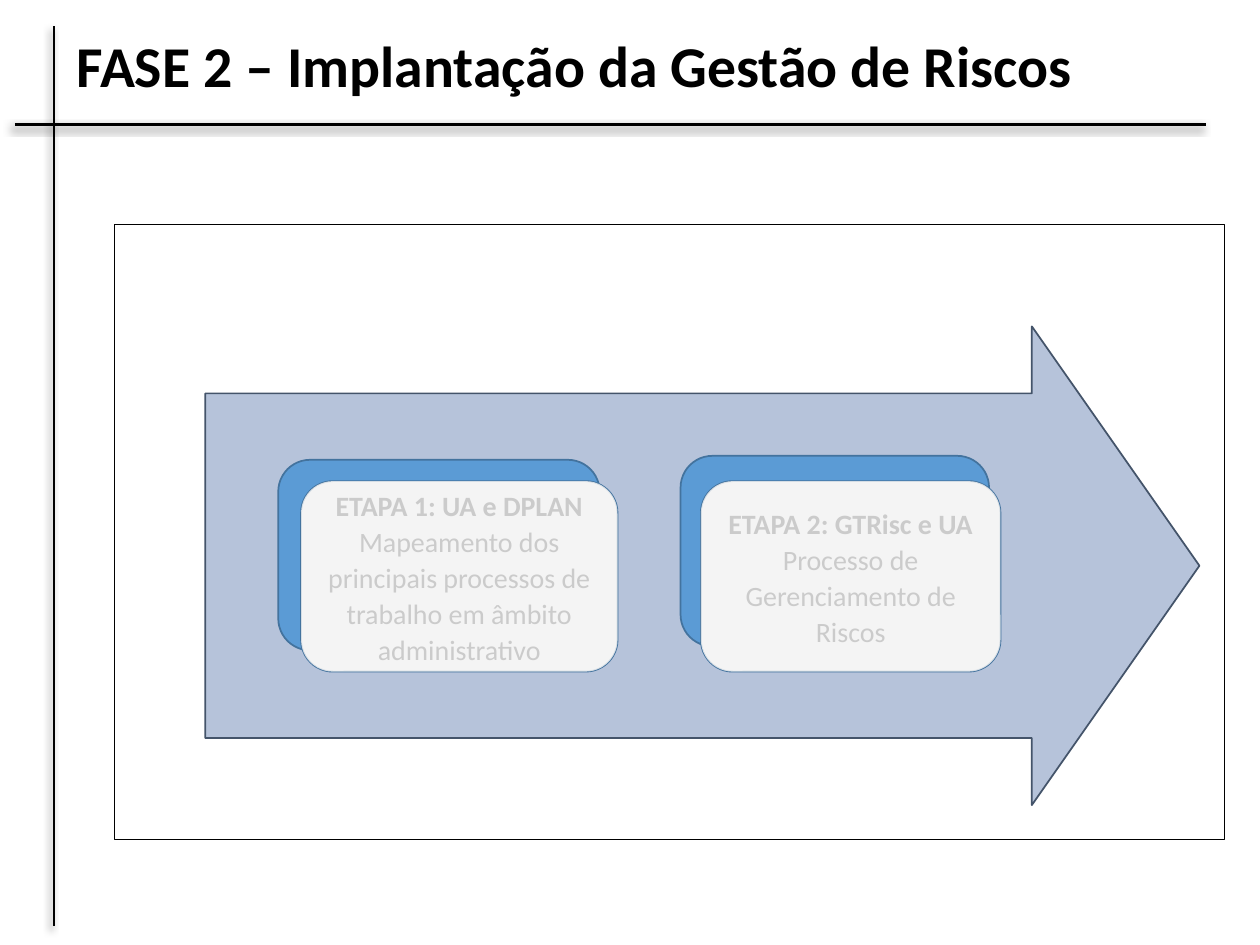
from lxml import etree
from pptx import Presentation
from pptx.dml.color import RGBColor
from pptx.enum.shapes import MSO_CONNECTOR, MSO_SHAPE
from pptx.enum.text import MSO_ANCHOR, PP_ALIGN
from pptx.oxml.ns import qn
from pptx.util import Cm, Pt

STRAIGHT = MSO_CONNECTOR.STRAIGHT
RECTANGLE = MSO_SHAPE.RECTANGLE
ROUNDED = MSO_SHAPE.ROUNDED_RECTANGLE
RIGHT_ARROW = MSO_SHAPE.RIGHT_ARROW
MIDDLE = MSO_ANCHOR.MIDDLE
CENTER = PP_ALIGN.CENTER

FONT = "Calibri"
COLORS = {
    "black": "000000",
    "white": "FFFFFF",
    "arrow": "2F5597",
    "arrow_edge": "44546A",
    "back_card": "5B9BD5",
    "card_edge": "43739E",
    "veil": "F2F2F2",
}
CARD_TOP, CARD_HEIGHT = 9.7, 3.84

# Back card (left, top, width), front card (left, width), heading, description
STAGES = [
    ((5.61, 9.27, 6.48), (6.07, 6.38), "ETAPA 1: UA e DPLAN",
     "Mapeamento dos principais processos de trabalho em âmbito administrativo"),
    ((13.72, 9.19, 6.22), (14.13, 6.04), "ETAPA 2: GTRisc e UA",
     "Processo de Gerenciamento de Riscos"),
]


def color(name):
    return RGBColor.from_string(COLORS[name])


def set_alpha(parent, percent):
    for value in parent.iter(qn("a:srgbClr")):
        etree.SubElement(value, qn("a:alpha"), val=str(percent * 1000))


def add_rule(page, start, end):
    """Draw a black line with a soft shadow to its lower left."""
    rule = page.shapes.add_connector(STRAIGHT, *map(Cm, start + end))
    rule.line.color.rgb = color("black")
    rule.line.width = Pt(1.5)
    effects = etree.SubElement(rule._element.spPr, qn("a:effectLst"))
    shadow = etree.SubElement(
        effects, qn("a:outerShdw"), blurRad=str(Pt(4)), dist=str(Pt(3)),
        dir=str(135 * 60000), algn="tr", rotWithShape="0")
    etree.SubElement(shadow, qn("a:srgbClr"), val=COLORS["black"])
    set_alpha(shadow, 40)


def add_title(page, text):
    box = page.shapes.add_textbox(Cm(1.3), Cm(0.18), Cm(24.87), Cm(2.41))
    frame = box.text_frame
    frame.word_wrap = True
    frame.vertical_anchor = MIDDLE
    para = frame.paragraphs[0]
    para.text = text
    para.line_spacing = 0.9
    style_text(para, 33, True)


def style_text(para, size, bold):
    para.font.name = FONT
    para.font.size = Pt(size)
    para.font.bold = bold
    para.font.color.rgb = color("black")


def add_block(shapes, kind, bounds, fill=None, edge=None, width=1, alpha=None):
    block = shapes.add_shape(kind, *map(Cm, bounds))
    block.shadow.inherit = False
    if fill:
        block.fill.solid()
        block.fill.fore_color.rgb = color(fill)
    else:
        block.fill.background()
    if alpha:
        set_alpha(block._element.spPr.find(qn("a:solidFill")), alpha)
    if edge:
        block.line.color.rgb = color(edge)
        block.line.width = Pt(width)
    else:
        block.line.fill.background()
    return block


def write_stage(card, heading, description):
    frame = card.text_frame
    frame.word_wrap = True
    frame.vertical_anchor = MIDDLE
    frame.margin_left = frame.margin_right = 0
    frame.margin_top = frame.margin_bottom = 0
    frame.text = f"{heading}\n{description}"
    for para, bold in zip(frame.paragraphs, (True, False)):
        para.alignment = CENTER
        para.line_spacing = 1.07
        style_text(para, 16, bold)


def add_diagram(page):
    shapes = page.shapes.add_group_shape().shapes
    add_block(shapes, RECTANGLE, (2.31, 4.52, 22.38, 12.4),
              edge="black", width=0.75)
    arrow = add_block(shapes, RIGHT_ARROW, (4.14, 6.58, 20.04, 9.65),
                      "arrow", "arrow_edge", alpha=35)
    arrow.adjustments[0] = 0.72
    arrow.adjustments[1] = 0.35
    for back, (left, width), heading, description in STAGES:
        add_block(shapes, ROUNDED, (*back, CARD_HEIGHT),
                  "back_card", "card_edge")
        card = add_block(shapes, ROUNDED, (left, CARD_TOP, width, CARD_HEIGHT),
                         "white", "card_edge")
        write_stage(card, heading, description)


def add_veils(page):
    """Fade the front cards with translucent covers."""
    for _, (left, width), _, _ in STAGES:
        add_block(page.shapes, ROUNDED, (left, CARD_TOP, width, CARD_HEIGHT),
                  "veil", alpha=84)


def main():
    deck = Presentation()
    deck.slide_width, deck.slide_height = Cm(25.4), Cm(19.05)
    page = deck.slides.add_slide(deck.slide_layouts[6])
    add_rule(page, (1.09, 0.53), (1.09, 18.67))
    add_rule(page, (0.3, 2.51), (24.31, 2.51))
    add_title(page, "FASE 2 – Implantação da Gestão de Riscos")
    add_diagram(page)
    add_veils(page)
    deck.save("out.pptx")


if __name__ == "__main__":
    main()
